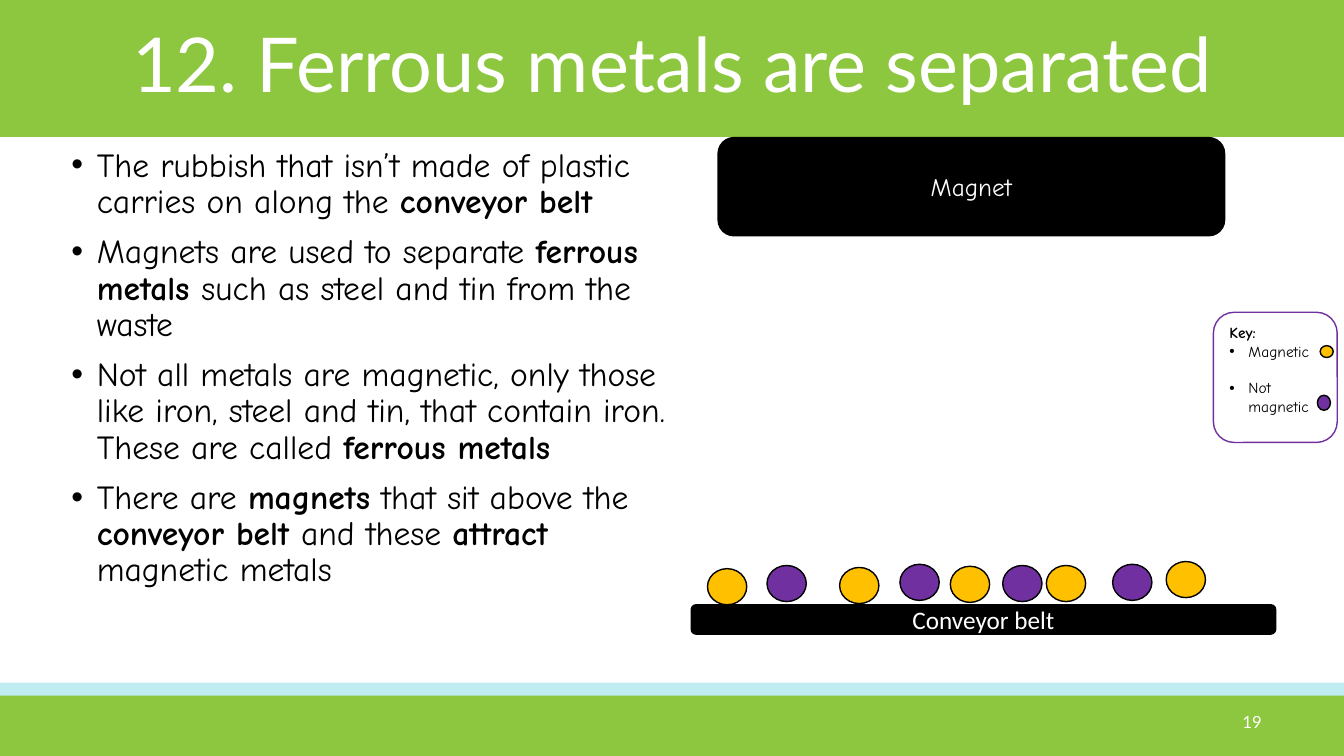
from lxml import etree
from pptx import Presentation
from pptx import util as u
from pptx.dml.color import RGBColor
from pptx.enum import shapes, text
from pptx.oxml.ns import qn

GREEN, AQUA, GOLD, PURPLE = "8DC63F", "20BFD0", "FFC000", "7030A0"
BLACK, WHITE = "000000", "FFFFFF"
WIDE, HIGH = 33.87, 19.05
HEAD = (0, 0, WIDE, 3.45)
BANDS = [((0, 17.2, WIDE, 0.61), AQUA), (HEAD, GREEN), ((0, 17.53, WIDE, 1.52), GREEN)]
TITLE = "12. Ferrous metals are separated"
POINTS = [
    "The rubbish that isn’t made of plastic carries on along the **conveyor belt**",
    "Magnets are used to separate **ferrous metals **such as steel and tin from the waste",
    "Not all metals are magnetic, only those like iron, steel and tin, that contain iron. "
    "These are called **ferrous metals**",
    "There are **magnets** that sit above the **conveyor belt **and these **attract** magnetic metals",
]
MAGNET = (18.08, 3.45, 12.8, 2.51)
BELT = (17.42, 15.24, 14.73, 0.74)
BALL = (0.99, 0.91)
BALLS = {
    GOLD: [(17.83, 14.33), (21.16, 14.3), (26.37, 14.25), (23.95, 14.27), (29.39, 14.15)],
    PURPLE: [(19.33, 14.25), (28.04, 14.22), (22.68, 14.22), (25.27, 14.25)],
}
KEY = (30.58, 7.87, 3.12, 3.28)
KINDS = ["Magnetic", "Not magnetic"]
DOTS = [((33.27, 8.71, 0.33, 0.3), GOLD), ((33.2, 9.96, 0.33, 0.38), PURPLE)]

RECT = shapes.MSO_SHAPE.RECTANGLE
ROUND = shapes.MSO_SHAPE.ROUNDED_RECTANGLE
OVAL = shapes.MSO_SHAPE.OVAL
LEFT, MID, RIGHT = text.PP_ALIGN.LEFT, text.PP_ALIGN.CENTER, text.PP_ALIGN.RIGHT

deck = Presentation()
deck.slide_width, deck.slide_height = u.Cm(WIDE), u.Cm(HIGH)
slide = deck.slides.add_slide(deck.slide_layouts[6])


def paint(target, code):
    target.rgb = RGBColor.from_string(code)


def draw(kind, box, fill=None, line=None):
    shape = slide.shapes.add_shape(kind, *map(u.Cm, box))
    shape.shadow.inherit = False
    if fill:
        shape.fill.solid()
        paint(shape.fill.fore_color, fill)
    else:
        shape.fill.background()
    if line:
        paint(shape.line.color, line)
        shape.line.width = u.Pt(1)
    else:
        shape.line.fill.background()
    return shape


def label(box):
    return slide.shapes.add_textbox(*map(u.Cm, box))


def frame(shape, anchor=text.MSO_ANCHOR.MIDDLE):
    area = shape.text_frame
    area.word_wrap = True
    area.vertical_anchor = anchor
    return area


def write(para, words, size, face, color, align=LEFT, indent=0):
    para.alignment = align
    if indent:
        props = para._p.get_or_add_pPr()
        props.set("marL", str(u.Cm(indent)))
        props.set("indent", str(-u.Cm(indent)))
        etree.SubElement(props, qn("a:buFont")).set("typeface", "Arial")
        etree.SubElement(props, qn("a:buChar")).set("char", "•")
    for i, part in enumerate(words.split("**")):
        if part:
            run = para.add_run()
            run.text = part
            if i % 2:
                run.font.bold = True
    para.font.size = u.Pt(size)
    para.font.name = face
    paint(para.font.color, color)


for box, color in BANDS:
    band = draw(RECT, box, color)
    if color == AQUA:
        tint = band.fill._xPr.find(".//" + qn("a:srgbClr"))
        etree.SubElement(tint, qn("a:alpha")).set("val", "29000")

magnet = draw(ROUND, MAGNET, BLACK)
write(frame(magnet).paragraphs[0], "Magnet", 18, "Comic Neue", WHITE, MID)

title = frame(label(HEAD)).paragraphs[0]
title.line_spacing = 0.9
write(title, TITLE, 54, "Lato", WHITE, MID)

body = frame(label((1.55, 3.61, 15.88, 13.44)), text.MSO_ANCHOR.TOP)
for i, point in enumerate(POINTS):
    para = body.add_paragraph() if i else body.paragraphs[0]
    para.line_spacing = 0.9
    if i:
        para.space_before = u.Pt(10)
    write(para, point, 24, "Comic Neue", BLACK, LEFT, 0.64)

page = label((24.43, 17.68, 7.62, 1.02))
write(frame(page).paragraphs[0], "19", 12, "Lato", WHITE, RIGHT)

belt = draw(ROUND, BELT, BLACK, BLACK)
write(frame(belt).paragraphs[0], "Conveyor belt", 18, "Calibri", WHITE, MID)

for color, spots in BALLS.items():
    for spot in spots:
        draw(OVAL, spot + BALL, color, BLACK)

key = frame(draw(ROUND, KEY, None, PURPLE), text.MSO_ANCHOR.TOP)
write(key.paragraphs[0], "**Key:**", 11, "Comic Neue", BLACK)
for i, kind in enumerate(KINDS):
    para = key.add_paragraph()
    if i:
        para.space_before = u.Pt(13)
    write(para, kind, 11, "Comic Neue", BLACK, LEFT, 0.48)
for box, color in DOTS:
    draw(OVAL, box, color, BLACK)

deck.save("out.pptx")
